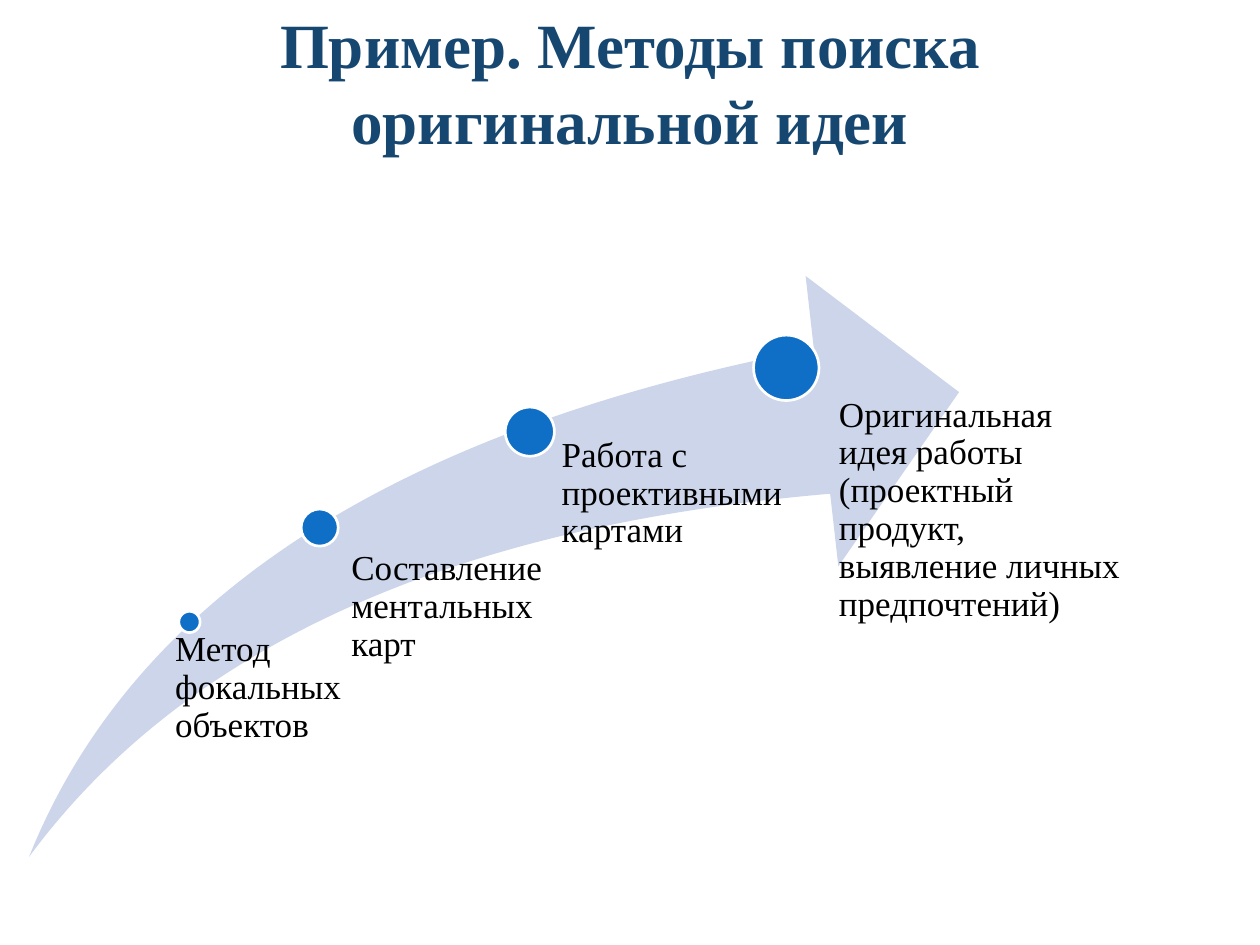
from dataclasses import dataclass

import pptx
import pptx.dml.color
import pptx.enum.shapes
import pptx.enum.text
import pptx.util

Pt = pptx.util.Pt
RGBColor = pptx.dml.color.RGBColor
Shapes = pptx.enum.shapes.MSO_SHAPE
Align = pptx.enum.text.PP_ALIGN
Anchor = pptx.enum.text.MSO_ANCHOR

NAVY = RGBColor(0x16, 0x47, 0x70)
BLUE = RGBColor(0x0F, 0x6F, 0xC6)
PALE_BLUE = RGBColor(0xCC, 0xD5, 0xEA)
BLACK = RGBColor(0, 0, 0)
WHITE = RGBColor(0xFF, 0xFF, 0xFF)

FONT = "Times New Roman"
TITLE_FONT = {"name": FONT, "size": Pt(36), "bold": True}
LABEL_FONT = {"name": FONT, "size": Pt(20)}
TITLE_PARA = {"alignment": Align.CENTER}
LABEL_PARA = {"alignment": Align.LEFT, "line_spacing": 0.9, "space_after": Pt(7)}


@dataclass
class Area:
    left: float
    top: float
    width: float
    height: float

    def points(self) -> tuple:
        return tuple(Pt(v) for v in (self.left, self.top, self.width, self.height))


@dataclass
class Step:
    text: str
    dot: Area
    label: Area
    indent: float  # left inset of the label


STEPS = [
    Step("Метод фокальных объектов",
         Area(102.2, 349.3, 12.2, 12.2), Area(93.6, 360.7, 119.5, 79.2), 6.5),
    Step("Составление ментальных карт",
         Area(172.1, 290.9, 21.2, 21.2), Area(189.4, 314.6, 144.7, 151.9), 11.3),
    Step("Работа с проективными картами",
         Area(288.7, 232.6, 28.1, 28.1), Area(306, 249.8, 157, 28.1), 15),
    Step("Оригинальная идея работы (проектный продукт, выявление личных предпочтений)",
         Area(430.6, 191.5, 37.4, 37.4), Area(459.4, 226.8, 181, 237.6), 20),
]


def apply(target, values: dict) -> None:
    for name, value in values.items():
        setattr(target, name, value)


def add_text(page, text: str, area: Area, font: dict, color: RGBColor,
             para_format: dict, anchor: Anchor, indent: float = 0) -> None:
    frame = page.shapes.add_textbox(*area.points()).text_frame
    apply(frame, {
        "word_wrap": True, "vertical_anchor": anchor, "margin_left": Pt(indent),
        "margin_top": 0, "margin_right": 0, "margin_bottom": 0,
    })
    para = frame.paragraphs[0]
    apply(para, para_format)
    span = para.add_run()
    span.text = text
    apply(span.font, font)
    span.font.color.rgb = color


def add_solid(page, kind: Shapes, area: Area, color: RGBColor):
    shape = page.shapes.add_shape(kind, *area.points())
    shape.shadow.inherit = False
    shape.fill.solid()
    shape.fill.fore_color.rgb = color
    shape.line.fill.background()
    return shape


def add_step(page, step: Step) -> None:
    dot = add_solid(page, Shapes.OVAL, step.dot, BLUE)
    dot.line.color.rgb = WHITE
    dot.line.width = Pt(1.54)
    add_text(page, step.text, step.label, LABEL_FONT, BLACK, LABEL_PARA,
             Anchor.TOP, step.indent)


def main() -> None:
    deck = pptx.Presentation()
    deck.slide_width, deck.slide_height = Pt(720), Pt(540)
    page = deck.slides.add_slide(deck.slide_layouts[6])

    # Title
    add_text(page, "Пример. Методы поиска оригинальной идеи",
             Area(108, 0, 504, 93), TITLE_FONT, NAVY, TITLE_PARA, Anchor.MIDDLE)

    # Rising arrow
    arrow = add_solid(page, Shapes.SWOOSH_ARROW, Area(16.6, 157.7, 531.4, 331.9), PALE_BLUE)
    arrow.adjustments[0] = 0.25
    arrow.adjustments[1] = 0.25

    # Steps along the arrow
    for step in STEPS:
        add_step(page, step)

    deck.save("out.pptx")


if __name__ == "__main__":
    main()
